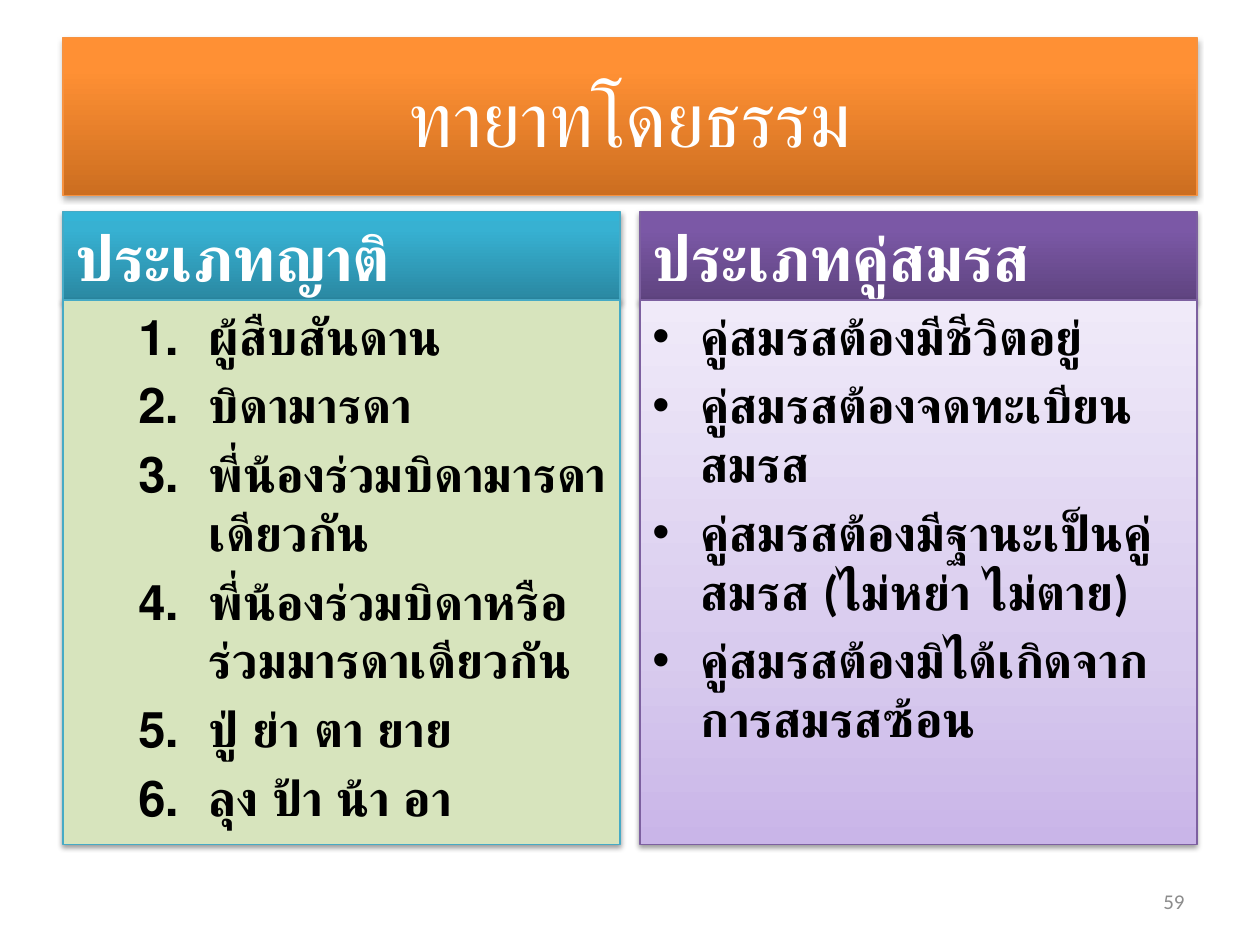
"""Builds a slide on heirs by law: relatives beside spouses."""
from dataclasses import dataclass

import lxml.etree
import pptx
import pptx.dml.color
import pptx.enum.lang
import pptx.enum.shapes
import pptx.enum.text
import pptx.oxml.ns
import pptx.util

Cm, Pt = pptx.util.Cm, pptx.util.Pt
ALIGN, ANCHOR = pptx.enum.text.PP_ALIGN, pptx.enum.text.MSO_ANCHOR
qn = pptx.oxml.ns.qn


@dataclass(frozen=True)
class Theme:
    font: str = "Calibri"
    bullet_font: str = "Arial"
    title_size: int = 44
    header_size: int = 36
    list_size: int = 28
    number_size: int = 12
    light: str = "FFFFFF"
    dark: str = "000000"
    grey: str = "8C8C8C"
    orange_line: str = "F69240"
    teal_line: str = "46AAC5"
    purple_line: str = "7D60A0"
    green: tuple = ((0, "D7E4BD"),)
    orange: tuple = ((0, "CC6E20"), (80, "FF9034"), (100, "FF9136"))
    teal: tuple = ((0, "2A88A2"), (80, "37B1D2"), (100, "34B4D6"))
    purple: tuple = ((0, "5F4480"), (80, "7B58A6"), (100, "7C57A8"))
    lilac: tuple = ((0, "C9B5E8"), (35, "D8CBEE"), (100, "F0EAF9"))


def child(parent, tag, **attrs):
    e = lxml.etree.SubElement(parent, qn(tag))
    for name, value in attrs.items():
        e.set(name, str(value))
    return e


class SlideBuilder:
    def __init__(self, prs, theme):
        self.t = theme
        self.s = prs.slides.add_slide(prs.slide_layouts[5])

    def place(self, sp, box):
        sp.left, sp.top, sp.width, sp.height = (Cm(v) for v in box)

    def decorate(self, sp, stops, line, opacity=35, distance=1.8):
        if len(stops) == 1:
            sp.fill.solid()
            sp.fill.fore_color.rgb = pptx.dml.color.RGBColor.from_string(stops[0][1])
        else:
            sp.fill.gradient()
            sp.fill.gradient_angle = 90
            stop_list = sp._element.spPr.find(".//" + qn("a:gsLst"))
            stop_list.clear()
            for pos, color in stops:
                child(child(stop_list, "a:gs", pos=pos * 1000), "a:srgbClr", val=color)
        sp.line.color.rgb = pptx.dml.color.RGBColor.from_string(line)
        sp.line.width = Pt(0.75)
        sp.shadow.inherit = False
        shadow = child(sp._element.spPr.find(qn("a:effectLst")), "a:outerShdw",
                       blurRad=Pt(3.1), dist=Pt(distance), dir=5400000, rotWithShape=0)
        color = child(shadow, "a:srgbClr", val=self.t.dark)
        child(color, "a:alpha", val=opacity * 1000)

    def add_text(self, p, text, size, color, bold=False, align=ALIGN.LEFT):
        p.alignment = align
        r = p.add_run()
        r.text = text
        r.font.name, r.font.size, r.font.bold = self.t.font, Pt(size), bold
        r.font.color.rgb = pptx.dml.color.RGBColor.from_string(color)
        r.font.language_id = pptx.enum.lang.MSO_LANGUAGE_ID.THAI

    def title(self, text, box):
        sp = self.s.shapes.title
        self.place(sp, box)
        self.decorate(sp, self.t.orange, self.t.orange_line)
        sp.text_frame.vertical_anchor = ANCHOR.MIDDLE
        self.add_text(sp.text_frame.paragraphs[0], text, self.t.title_size,
                      self.t.light, align=ALIGN.CENTER)

    def panel(self, box, anchor, *style):
        sp = self.s.shapes.add_shape(pptx.enum.shapes.MSO_SHAPE.RECTANGLE,
                                     *(Cm(v) for v in box))
        self.decorate(sp, *style)
        tf = sp.text_frame
        tf.word_wrap, tf.vertical_anchor = True, anchor
        return tf

    def header(self, text, box, stops, line):
        tf = self.panel(box, ANCHOR.BOTTOM, stops, line)
        self.add_text(tf.paragraphs[0], text, self.t.header_size, self.t.light, True)

    def items(self, texts, box, stops, line, numbered):
        tf = self.panel(box, ANCHOR.TOP, stops, line, 38, 1.6)
        margin, hang = (2.69, 1.42) if numbered else (0.97, 0.97)
        for i, text in enumerate(texts):
            p = tf.add_paragraph() if i else tf.paragraphs[0]
            self.add_text(p, text, self.t.list_size, self.t.dark, True)
            p.space_before = Pt(self.t.list_size * 0.2)
            pPr = p._p.get_or_add_pPr()
            pPr.set("marL", str(Cm(margin)))
            pPr.set("indent", str(-Cm(hang)))
            child(pPr, "a:buFont", typeface=self.t.bullet_font)
            if numbered:
                child(pPr, "a:buAutoNum", type="arabicPeriod")
            else:
                child(pPr, "a:buChar", char="•")

    def number(self, text, box):
        tf = self.s.shapes.add_textbox(*(Cm(v) for v in box)).text_frame
        tf.word_wrap, tf.vertical_anchor = True, ANCHOR.MIDDLE
        self.add_text(tf.paragraphs[0], text, self.t.number_size, self.t.grey,
                      align=ALIGN.RIGHT)


def main():
    prs = pptx.Presentation()
    prs.slide_width, prs.slide_height = Cm(25.4), Cm(19.05)
    t = Theme()
    b = SlideBuilder(prs, t)
    left, width, column = 1.27, 22.86, 11.23
    top, header_height, list_height = 4.27, 1.78, 10.97
    b.title("ทายาทโดยธรรม", (left, 0.76, width, 3.18))
    relatives = ("ผู้สืบสันดาน", "บิดามารดา", "พี่น้องร่วมบิดามารดาเดียวกัน",
                 "พี่น้องร่วมบิดาหรือร่วมมารดาเดียวกัน", "ปู่ ย่า ตา ยาย", "ลุง ป้า น้า อา")
    spouses = ("คู่สมรสต้องมีชีวิตอยู่", "คู่สมรสต้องจดทะเบียนสมรส",
               "คู่สมรสต้องมีฐานะเป็นคู่สมรส (ไม่หย่า ไม่ตาย)",
               "คู่สมรสต้องมิได้เกิดจากการสมรสซ้อน")
    columns = (
        (left, "ประเภทญาติ", relatives, t.teal, t.green, t.teal_line, True),
        (left + width - column, "ประเภทคู่สมรส", spouses, t.purple, t.lilac,
         t.purple_line, False),
    )
    for x, heading, texts, head_fill, list_fill, line, numbered in columns:
        b.header(heading, (x, top, column, header_height), head_fill, line)
        b.items(texts, (x, top + header_height, column, list_height),
                list_fill, line, numbered)
    b.number("59", (18.2, 17.65, 5.93, 1.02))
    prs.save("out.pptx")


if __name__ == "__main__":
    main()
